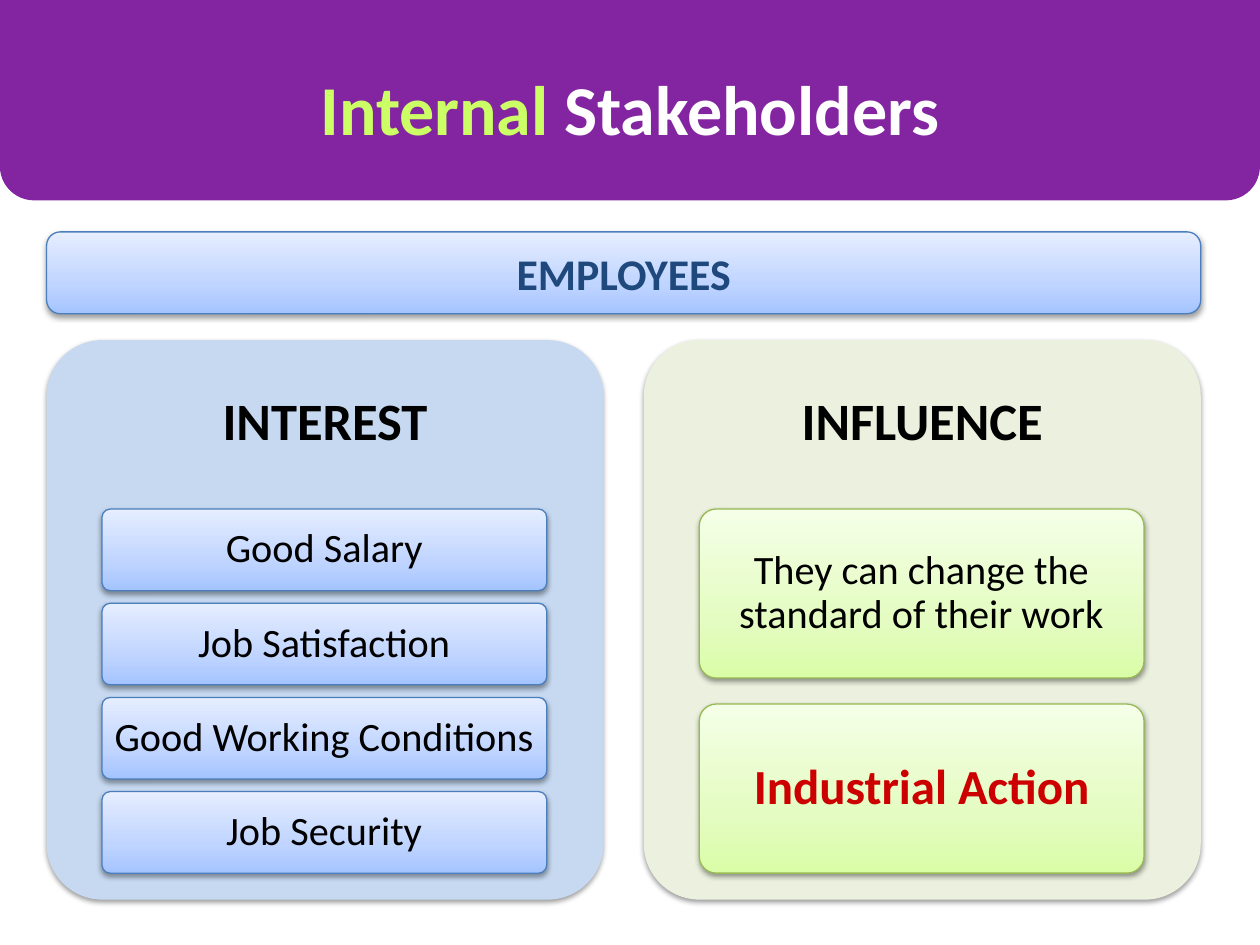
from dataclasses import dataclass

from lxml import etree
from pptx import Presentation
from pptx.dml.color import RGBColor
from pptx.enum.shapes import MSO_SHAPE
from pptx.enum.text import MSO_ANCHOR, MSO_AUTO_SIZE, PP_ALIGN
from pptx.oxml import parse_xml
from pptx.oxml.ns import nsdecls, qn
from pptx.util import Inches, Pt

ROUNDED, RECT = MSO_SHAPE.ROUNDED_RECTANGLE, MSO_SHAPE.RECTANGLE
MIDDLE, CENTER, NO_FIT = MSO_ANCHOR.MIDDLE, PP_ALIGN.CENTER, MSO_AUTO_SIZE.NONE


@dataclass(frozen=True)
class Theme:
    font: str = "Calibri"
    band: str = "8325A1"
    accent: str = "CCFF66"
    white: str = "FFFFFF"
    black: str = "000000"
    navy: str = "1F497D"
    red: str = "CC0000"
    blue_panel: str = "C6D9F1"
    blue_line: str = "4B7EBC"
    blue_stops: tuple = ((0, "A4C4FF"), (35, "BFD4FF"), (100, "E6EEFF"))
    green_panel: str = "EBF1DE"
    green_line: str = "98B955"
    green_stops: tuple = ((0, "DAFDA7"), (35, "E4FCC2"), (100, "F5FFE7"))
    title_size: int = 40
    heading_size: int = 30
    strong_size: int = 28
    banner_size: int = 25
    card_size: int = 23


T = Theme()

# Layout in inches
SLIDE_W, SLIDE_H = 10, 7.5
LEFT, COL_W, COL_PITCH = 0.37, 4.42, 4.74
PANEL_TOP, PANEL_H, HEADING_H = 2.7, 4.44, 1.33
CARD_INDENT, CARD_W = 0.44, 3.53
CARDS_TOP, CARDS_H, GAP_RATIO = 4.04, 2.89, 0.154


def place(sp, x, y, w, h):
    sp.left, sp.top, sp.width, sp.height = (Inches(v) for v in (x, y, w, h))


def add_text(tf, *parts, size, color=T.black, bold=False, spacing=None,
             margins=(0.1, 0.05)):
    """Write one centred paragraph; a part is a text or a (text, colour) pair."""
    tf.word_wrap = True
    tf.auto_size = NO_FIT
    tf.vertical_anchor = MIDDLE
    tf.margin_left = tf.margin_right = Inches(margins[0])
    tf.margin_top = tf.margin_bottom = Inches(margins[1])
    p = tf.paragraphs[0]
    p.alignment = CENTER
    if spacing:
        p.line_spacing = spacing
    for part in parts:
        text, part_color = (part, color) if isinstance(part, str) else part
        r = p.add_run()
        r.text = text
        r.font.name = T.font
        r.font.size = Pt(size)
        r.font.bold = bold
        r.font.color.rgb = RGBColor.from_string(part_color)


def add_shadow(sp):
    effects = sp._element.spPr.find(qn("a:effectLst"))
    effects.append(parse_xml(
        f'<a:outerShdw {nsdecls("a")} blurRad="{Pt(3.1)}" dist="{Pt(1.6)}" '
        'dir="5400000" rotWithShape="0"><a:srgbClr val="000000">'
        '<a:alpha val="38000"/></a:srgbClr></a:outerShdw>'))


def set_gradient(sp, stops):
    """Fill with stops that run from the bottom edge to the top edge."""
    sp.fill.gradient()
    grad = sp._element.spPr.find(qn("a:gradFill"))
    for child in list(grad):
        grad.remove(child)
    gs_list = etree.SubElement(grad, qn("a:gsLst"))
    for pos, color in stops:
        gs = etree.SubElement(gs_list, qn("a:gs"), pos=str(pos * 1000))
        etree.SubElement(gs, qn("a:srgbClr"), val=color)
    etree.SubElement(grad, qn("a:lin"), ang="16200000", scaled="0")


def add_box(s, x, y, w, h, fill, kind=ROUNDED, adj=None, line=None, shadow=True):
    """Add a box; fill is one colour or a tuple of gradient stops."""
    sp = s.shapes.add_shape(kind, *(Inches(v) for v in (x, y, w, h)))
    if adj is not None:
        sp.adjustments[0] = adj
    if isinstance(fill, str):
        sp.fill.solid()
        sp.fill.fore_color.rgb = RGBColor.from_string(fill)
    else:
        set_gradient(sp, fill)
    if line:
        sp.line.color.rgb = RGBColor.from_string(line)
        sp.line.width = Pt(0.75)
    else:
        sp.line.fill.background()
    sp.shadow.inherit = False
    if shadow:
        add_shadow(sp)
    return sp


def add_title(s):
    add_box(s, 0, 0, SLIDE_W, 1.59, T.band, adj=0.17, shadow=False)
    add_box(s, 0, 0, SLIDE_W, 1.12, T.band, kind=RECT, shadow=False)
    title = s.shapes.title
    place(title, 0, 0.47, SLIDE_W, 0.77)
    add_text(title.text_frame, ("Internal", T.accent), " Stakeholders",
             size=T.title_size, color=T.white, bold=True)
    title.element.getparent().append(title.element)  # in front of the band


def add_banner(s, text):
    sp = add_box(s, LEFT, 1.84, COL_PITCH + COL_W, 0.65, T.blue_stops,
                 line=T.blue_line)
    add_text(sp.text_frame, text, size=T.banner_size, color=T.navy, bold=True)


def add_panel(s, col, heading, cards, fill, stops, line):
    """Add a column panel whose cards, (text, format) pairs, share its height."""
    x = LEFT + col * COL_PITCH
    add_box(s, x, PANEL_TOP, COL_W, PANEL_H, fill, adj=0.1)
    tb = s.shapes.add_textbox(*(Inches(v) for v in (x, PANEL_TOP, COL_W, HEADING_H)))
    add_text(tb.text_frame, heading, size=T.heading_size, bold=True,
             spacing=0.9, margins=(0.12, 0.12))
    n = len(cards)
    h = CARDS_H / (n + (n - 1) * GAP_RATIO)
    for i, (text, fmt) in enumerate(cards):
        y = CARDS_TOP + i * h * (1 + GAP_RATIO)
        sp = add_box(s, x + CARD_INDENT, y, CARD_W, h, stops, adj=0.1, line=line)
        add_text(sp.text_frame, text, spacing=0.9, margins=(0.06, 0.05), **fmt)


def main():
    prs = Presentation()
    prs.slide_width, prs.slide_height = Inches(SLIDE_W), Inches(SLIDE_H)
    s = prs.slides.add_slide(prs.slide_layouts[5])
    plain = dict(size=T.card_size)
    strong = dict(size=T.strong_size, color=T.red, bold=True)
    interests = ("Good Salary", "Job Satisfaction", "Good Working Conditions",
                 "Job Security")

    add_title(s)
    add_banner(s, "EMPLOYEES")
    add_panel(s, 0, "INTEREST", [(text, plain) for text in interests],
              T.blue_panel, T.blue_stops, T.blue_line)
    add_panel(s, 1, "INFLUENCE",
              [("They can change the standard of their work", plain),
               ("Industrial Action", strong)],
              T.green_panel, T.green_stops, T.green_line)
    prs.save("out.pptx")


if __name__ == "__main__":
    main()
